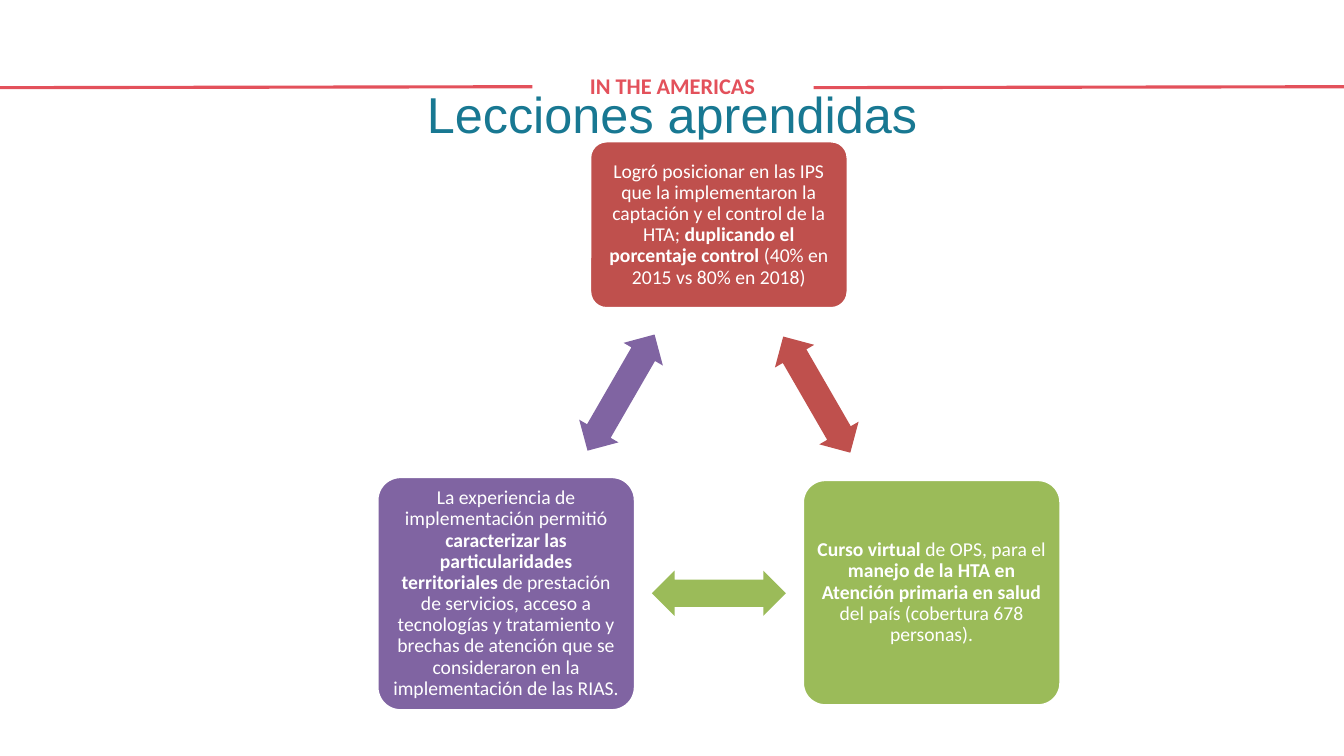
"""Build the slide on lessons learned: three cards in a cycle joined by double arrows."""
from dataclasses import dataclass

import lxml.etree
import pptx
import pptx.dml.color
import pptx.enum.shapes
import pptx.enum.text
import pptx.oxml.ns
import pptx.util

RGBColor = pptx.dml.color.RGBColor
Shapes = pptx.enum.shapes.MSO_SHAPE
Anchor = pptx.enum.text.MSO_ANCHOR
CENTER = pptx.enum.text.PP_ALIGN.CENTER

CORAL = RGBColor(0xE3, 0x51, 0x5B)
TEAL = RGBColor(0x18, 0x78, 0x92)
RED = RGBColor(0xBF, 0x50, 0x4D)
GREEN = RGBColor(0x9B, 0xBB, 0x59)
PURPLE = RGBColor(0x80, 0x64, 0xA2)
WHITE = RGBColor(0xFF, 0xFF, 0xFF)

SLIDE_WIDTH = pptx.util.Inches(13.33)
SLIDE_HEIGHT = pptx.util.Inches(7.5)
CYCLE_CENTER = 53.49
CARD_OFFSET = 15.83
ARROW_OFFSET = 7.28
CARD_WIDTH = 19.2
ARROW_SIZE = (9.98, 6)

HEADER_FORMAT = {"name": "Calibri", "size": pptx.util.Pt(16), "bold": True}
TITLE_FORMAT = {"name": "Arial", "size": pptx.util.Pt(36), "bold": False}
CARD_FORMAT = {"name": "Calibri", "size": pptx.util.Pt(14)}


@dataclass(frozen=True)
class Run:
    """A stretch of card text."""
    text: str
    bold: bool = False


@dataclass(frozen=True)
class Step:
    """A card and the arrow leaving it, in percent of the slide."""
    color: RGBColor
    card_x: float
    card_y: float
    card_height: float
    arrow_x: float
    arrow_y: float
    arrow_rotation: float
    runs: tuple[Run, ...]


STEPS = (
    Step(RED, CYCLE_CENTER, 29.73, 22.13, CYCLE_CENTER + ARROW_OFFSET, 52.2, 60, (
        Run("Logró posicionar en las IPS que la implementaron la captación "
            "y el control de la HTA; "),
        Run("duplicando el porcentaje control ", True),
        Run("(40% en 2015 vs 80% en 2018)"))),
    Step(GREEN, CYCLE_CENTER + CARD_OFFSET, 78.4, 29.87, CYCLE_CENTER, 78.47, 180, (
        Run("Curso virtual ", True),
        Run("de OPS, para el "),
        Run("manejo de la HTA en Atención primaria en salud", True),
        Run(" del país (cobertura 678 personas)."))),
    Step(PURPLE, CYCLE_CENTER - CARD_OFFSET, 78.53, 30.93,
         CYCLE_CENTER - ARROW_OFFSET, 51.93, 300, (
             Run("La experiencia de implementación permitió "),
             Run("caracterizar las particularidades territoriales ", True),
             Run("de prestación de servicios, acceso a tecnologías y tratamiento "
                 "y brechas de atención que se consideraron en la "
                 "implementación de las RIAS."))),
)


def across(percent: float) -> int:
    """Turn a share of the slide width into a length."""
    return round(SLIDE_WIDTH * percent / 100)


def down(percent: float) -> int:
    """Turn a share of the slide height into a length."""
    return round(SLIDE_HEIGHT * percent / 100)


def apply_format(target, values: dict) -> None:
    """Set each named attribute on the target."""
    for name, value in values.items():
        setattr(target, name, value)


def set_margins(frame, side: float, top: float) -> None:
    """Give a text frame equal side margins and equal top and bottom ones."""
    apply_format(frame, {
        "margin_left": pptx.util.Inches(side), "margin_right": pptx.util.Inches(side),
        "margin_top": pptx.util.Inches(top), "margin_bottom": pptx.util.Inches(top)})


def write_line(frame, text: str, values: dict, color: RGBColor) -> None:
    """Write one centred line at the top of a text frame."""
    apply_format(frame, {"word_wrap": True, "vertical_anchor": Anchor.TOP})
    set_margins(frame, 0.1, 0.05)
    paragraph = frame.paragraphs[0]
    paragraph.alignment = CENTER
    run = paragraph.add_run()
    run.text = text
    apply_format(run.font, values)
    run.font.color.rgb = color


def add_rule(slide, start: float, end: float) -> None:
    """Draw one header rule between two shares of the width."""
    rule = slide.shapes.add_connector(
        pptx.enum.shapes.MSO_CONNECTOR.STRAIGHT,
        across(start), down(11.6), across(end), down(11.47))
    rule.line.color.rgb = CORAL
    rule.line.width = pptx.util.Pt(2.25)
    properties = rule._element.spPr
    lxml.etree.SubElement(properties, pptx.oxml.ns.qn("a:effectLst"))


def add_centered_shape(slide, kind, x: float, y: float, width: float, height: float,
                       color: RGBColor):
    """Add a filled shape around its centre point."""
    shape = slide.shapes.add_shape(
        kind, across(x - width / 2), down(y - height / 2), across(width), down(height))
    shape.shadow.inherit = False
    shape.fill.solid()
    shape.fill.fore_color.rgb = color
    return shape


def add_card(slide, step: Step) -> None:
    """Draw the rounded card of a step with its text."""
    card = add_centered_shape(slide, Shapes.ROUNDED_RECTANGLE, step.card_x, step.card_y,
                              CARD_WIDTH, step.card_height, step.color)
    card.adjustments[0] = 0.1
    card.line.color.rgb = WHITE
    card.line.width = pptx.util.Pt(2)
    frame = card.text_frame
    apply_format(frame, {"word_wrap": True, "vertical_anchor": Anchor.MIDDLE})
    set_margins(frame, 0.06, 0.06)
    paragraph = frame.paragraphs[0]
    apply_format(paragraph, {"alignment": CENTER, "line_spacing": 0.9})
    for part in step.runs:
        run = paragraph.add_run()
        run.text = part.text
        apply_format(run.font, CARD_FORMAT | {"bold": part.bold})
        run.font.color.rgb = WHITE


def add_arrow(slide, step: Step) -> None:
    """Draw the double arrow that follows a step."""
    arrow = add_centered_shape(slide, Shapes.LEFT_RIGHT_ARROW, step.arrow_x, step.arrow_y,
                               *ARROW_SIZE, step.color)
    arrow.adjustments[0] = 0.6
    arrow.adjustments[1] = 0.5
    arrow.rotation = step.arrow_rotation
    arrow.line.fill.background()


def main() -> None:
    """Build and save the presentation."""
    presentation = pptx.Presentation()
    apply_format(presentation, {"slide_width": SLIDE_WIDTH, "slide_height": SLIDE_HEIGHT})
    slide = presentation.slides.add_slide(presentation.slide_layouts[5])

    add_rule(slide, 0, 39.61)
    add_rule(slide, 60.54, 100)
    header = slide.shapes.add_textbox(across(39.61), down(8.93), across(20.86), down(4.93))
    write_line(header.text_frame, "IN THE AMERICAS", HEADER_FORMAT, CORAL)

    title = slide.shapes.title
    apply_format(title, {"left": across(5), "top": down(10.27),
                         "width": across(90), "height": down(16.67)})
    write_line(title.text_frame, "Lecciones aprendidas", TITLE_FORMAT, TEAL)

    for step in STEPS:
        add_card(slide, step)
        add_arrow(slide, step)
    presentation.save("out.pptx")


if __name__ == "__main__":
    main()
